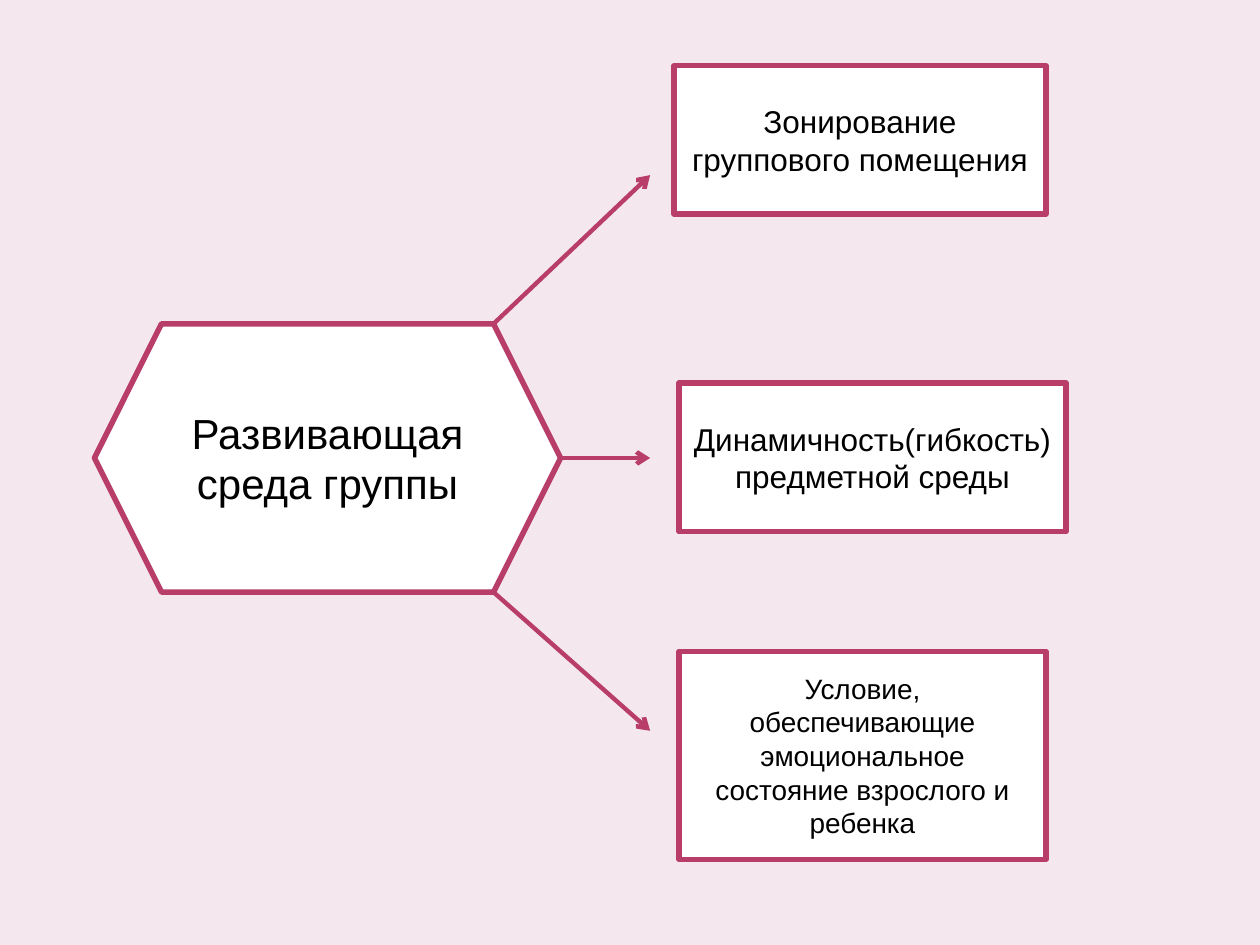
from dataclasses import dataclass

from lxml.etree import SubElement
from pptx import Presentation
from pptx.dml.color import RGBColor
from pptx.enum.shapes import MSO_CONNECTOR, MSO_SHAPE
from pptx.enum.text import MSO_ANCHOR, PP_ALIGN
from pptx.oxml.ns import qn
from pptx.slide import Slide
from pptx.util import Inches, Pt

# Grid: 100 columns by 75 rows of square cells
COLUMNS, ROWS = 100, 75
CELL = Inches(10) / COLUMNS


@dataclass(frozen=True)
class Theme:
    background: RGBColor = RGBColor(0xF4, 0xE7, 0xED)
    fill: RGBColor = RGBColor(0xFF, 0xFF, 0xFF)
    accent: RGBColor = RGBColor(0xB8, 0x3D, 0x68)
    text: RGBColor = RGBColor(0x00, 0x00, 0x00)
    font: str = "Arial"
    large: int = 24
    medium: int = 18
    small: int = 16
    outline: float = 3.15
    arrow: float = 2.5


@dataclass(frozen=True)
class Block:
    text: str
    column: float
    row: float
    width: float
    height: float
    size: int
    kind: MSO_SHAPE = MSO_SHAPE.RECTANGLE


@dataclass(frozen=True)
class Arrow:
    start: tuple[float, float]
    end: tuple[float, float]


THEME = Theme()

# Central idea and its three aspects
CENTRE = Block("Развивающая среда группы", 7.5, 25.7, 37, 21.3,
               THEME.large, MSO_SHAPE.HEXAGON)
ASPECTS = [
    Block("Зонирование группового помещения", 53.5, 5.2, 29.5, 11.8, THEME.medium),
    Block("Динамичность(гибкость) предметной среды", 53.9, 30.4, 30.7, 11.8,
          THEME.medium),
    Block("Условие, обеспечивающие эмоциональное состояние взрослого и ребенка",
          53.9, 51.7, 29.1, 16.5, THEME.small),
]

# Arrows leave the right-hand corners of the hexagon
TIP = CENTRE.column + CENTRE.width
CORNER = TIP - CENTRE.height / 4
MIDDLE = CENTRE.row + CENTRE.height / 2
ARROW_END = 51.6
ARROWS = [
    Arrow((CORNER, CENTRE.row), (ARROW_END, 13.9)),
    Arrow((CORNER, CENTRE.row + CENTRE.height), (ARROW_END, 58)),
    Arrow((TIP, MIDDLE), (ARROW_END, MIDDLE)),
]


def grid(*cells: float) -> list[int]:
    return [round(cell * CELL) for cell in cells]


def apply_format(target: object, values: dict[str, object]) -> None:
    for name, value in values.items():
        setattr(target, name, value)


def draw_block(slide: Slide, block: Block) -> None:
    shape = slide.shapes.add_shape(
        block.kind, *grid(block.column, block.row, block.width, block.height))
    shape.shadow.inherit = False
    shape.fill.solid()
    shape.fill.fore_color.rgb = THEME.fill
    shape.line.color.rgb = THEME.accent
    shape.line.width = Pt(THEME.outline)
    apply_format(shape.text_frame,
                 {"word_wrap": True, "vertical_anchor": MSO_ANCHOR.MIDDLE})
    paragraph = shape.text_frame.paragraphs[0]
    paragraph.alignment = PP_ALIGN.CENTER
    run = paragraph.add_run()
    run.text = block.text
    apply_format(run.font, {"name": THEME.font, "size": Pt(block.size)})
    run.font.color.rgb = THEME.text


def draw_arrow(slide: Slide, arrow: Arrow) -> None:
    connector = slide.shapes.add_connector(
        MSO_CONNECTOR.STRAIGHT, *grid(*arrow.start, *arrow.end))
    connector.line.color.rgb = THEME.accent
    connector.line.width = Pt(THEME.arrow)
    SubElement(connector.line._get_or_add_ln(), qn("a:tailEnd"), type="arrow")
    SubElement(connector._element.spPr, qn("a:effectLst"))


def main() -> None:
    presentation = Presentation()
    apply_format(presentation, {"slide_width": round(COLUMNS * CELL),
                                "slide_height": round(ROWS * CELL)})
    slide = presentation.slides.add_slide(presentation.slide_layouts[6])
    slide.background.fill.solid()
    slide.background.fill.fore_color.rgb = THEME.background

    for block in [CENTRE, *ASPECTS]:
        draw_block(slide, block)
    for arrow in ARROWS:
        draw_arrow(slide, arrow)
    presentation.save("out.pptx")


if __name__ == "__main__":
    main()
